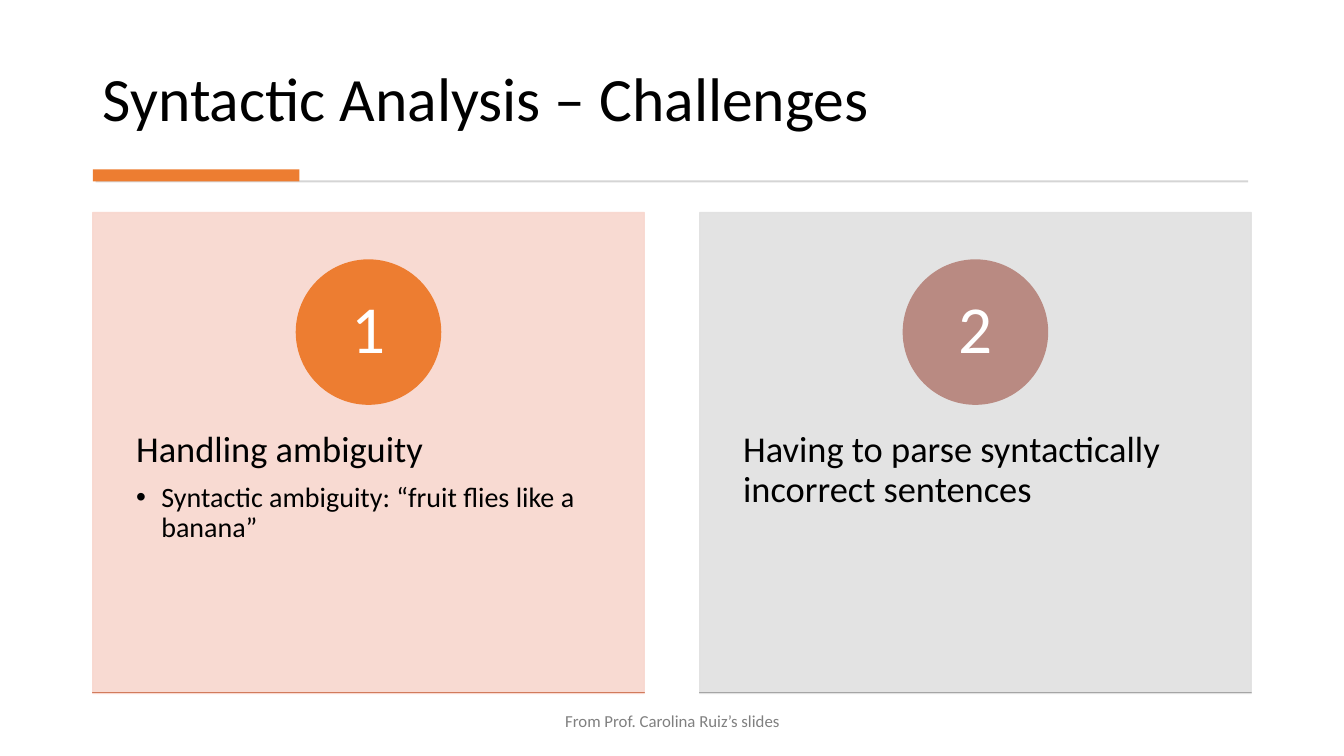
from lxml import etree
from pptx import Presentation
from pptx import util as u
from pptx.dml.color import RGBColor
from pptx.enum import shapes, text
from pptx.oxml import ns

BLACK = RGBColor(0x00, 0x00, 0x00)
WHITE = RGBColor(0xFF, 0xFF, 0xFF)
GREY = RGBColor(0x80, 0x80, 0x80)
RULE_GREY = RGBColor(0xD5, 0xD5, 0xD5)
ORANGE = RGBColor(0xED, 0x7D, 0x31)
PINK = RGBColor(0xF8, 0xD7, 0xCE)
RUST = RGBColor(0xD1, 0x7B, 0x5C)
PALE_GREY = RGBColor(0xE1, 0xE1, 0xE1)
ROSE = RGBColor(0xB9, 0x8A, 0x82)
MID_GREY = RGBColor(0xA5, 0xA5, 0xA5)

RECTANGLE = shapes.MSO_SHAPE.RECTANGLE
OVAL = shapes.MSO_SHAPE.OVAL
LEFT = text.PP_ALIGN.LEFT
CENTER = text.PP_ALIGN.CENTER
MIDDLE = text.MSO_ANCHOR.MIDDLE


class SlideBuilder:
    """Holds the style and the current slide."""

    font = "Calibri"

    def __init__(self, slide):
        self.slide = slide

    def place(self, shape, left, top, width, height):
        shape.left, shape.top = u.Inches(left), u.Inches(top)
        shape.width, shape.height = u.Inches(width), u.Inches(height)

    def frame(self, shape, anchor, inset_x=0.1, inset_y=0.05):
        frame = shape.text_frame
        frame.word_wrap = True
        frame.auto_size = text.MSO_AUTO_SIZE.NONE
        frame.vertical_anchor = anchor
        frame.margin_left = frame.margin_right = u.Inches(inset_x)
        frame.margin_top = frame.margin_bottom = u.Inches(inset_y)
        return frame

    def add_words(self, paragraph, words, size, color, align=LEFT, spacing=0.9, after=0):
        paragraph.alignment = align
        paragraph.line_spacing = spacing
        paragraph.space_before = u.Pt(0)
        paragraph.space_after = u.Pt(after)
        run = paragraph.add_run()
        run.text = words
        run.font.name = self.font
        run.font.size = u.Pt(size)
        run.font.color.rgb = color

    def bullet(self, paragraph, character=None, indent=0.0):
        properties = paragraph._p.get_or_add_pPr()
        properties.set("marL", str(u.Inches(indent)))
        properties.set("indent", str(u.Inches(-indent)))
        if character:
            etree.SubElement(properties, ns.qn("a:buChar")).set("char", character)
        else:
            etree.SubElement(properties, ns.qn("a:buNone"))

    def shape(self, kind, box, fill, line=None, opacity=100):
        shape = self.slide.shapes.add_shape(kind, *map(u.Inches, box))
        shape.shadow.inherit = False
        shape.fill.solid()
        shape.fill.fore_color.rgb = fill
        if line is None:
            shape.line.fill.background()
        else:
            shape.line.color.rgb = line
            shape.line.width = u.Pt(1)
        if opacity < 100:
            for color in shape._element.spPr.iter(ns.qn("a:srgbClr")):
                etree.SubElement(color, ns.qn("a:alpha")).set("val", str(opacity * 1000))
        return shape

    def title(self, words):
        title = self.slide.shapes.title
        self.place(title, 0.92, 0.28, 11.49, 1.11)
        frame = self.frame(title, text.MSO_ANCHOR.BOTTOM)
        self.add_words(frame.paragraphs[0], words, 44, BLACK)

    def caption(self, words, box):
        caption = self.slide.shapes.add_textbox(*map(u.Inches, box))
        frame = self.frame(caption, MIDDLE)
        self.add_words(frame.paragraphs[0], words, 12, GREY, CENTER, spacing=1.0, after=6)

    def card(self, body, left, number, heading, points, colors):
        panel, badge, edge = colors
        width, diameter = 5.47, 1.43
        # Panel, with the body text brought in front of it
        self.shape(RECTANGLE, (left, 2.11, width, 4.77), panel, panel, opacity=90)
        tree = body.element.getparent()
        tree.append(body.element)
        self.place(body, left, 3.92, width, 2.86)
        frame = self.frame(body, text.MSO_ANCHOR.TOP, 0.43, 0.36)
        self.add_words(frame.paragraphs[0], heading, 26, BLACK, after=9)
        self.bullet(frame.paragraphs[0])
        for point in points:
            paragraph = frame.add_paragraph()
            paragraph.level = 1
            self.add_words(paragraph, point, 20, BLACK, after=3)
            self.bullet(paragraph, "•", 0.25)
        # Numbered badge
        badge_left = left + (width - diameter) / 2
        circle = self.shape(OVAL, (badge_left, 2.58, diameter, diameter), badge, badge)
        frame = self.frame(circle, MIDDLE, 0.11, 0.01)
        self.add_words(frame.paragraphs[0], str(number), 48, WHITE, CENTER)
        # Bottom edge
        self.shape(RECTANGLE, (left, 6.87, width, 0), edge, edge)


def main():
    presentation = Presentation()
    presentation.slide_width = u.Inches(13.33)
    presentation.slide_height = u.Inches(7.5)
    two_content = presentation.slide_layouts[3]
    slide = presentation.slides.add_slide(two_content)
    builder = SlideBuilder(slide)

    # Title and rule
    builder.title("Syntactic Analysis – Challenges")
    builder.shape(RECTANGLE, (0.95, 1.79, 11.43, 0.02), RULE_GREY)
    builder.shape(RECTANGLE, (0.92, 1.68, 2.05, 0.12), ORANGE)

    # Credit line
    builder.caption("From Prof. Carolina Ruiz’s slides", (4.42, 6.95, 4.5, 0.4))

    # Challenge cards
    challenges = [
        ("Handling ambiguity",
         ["Syntactic ambiguity: “fruit flies like a banana”"],
         (PINK, ORANGE, RUST)),
        ("Having to parse syntactically incorrect sentences",
         [],
         (PALE_GREY, ROSE, MID_GREY)),
    ]
    bodies = [slide.placeholders[1], slide.placeholders[2]]
    for index, (body, challenge) in enumerate(zip(bodies, challenges)):
        builder.card(body, 0.92 + index * 6.02, index + 1, *challenge)

    presentation.save("out.pptx")


if __name__ == "__main__":
    main()
